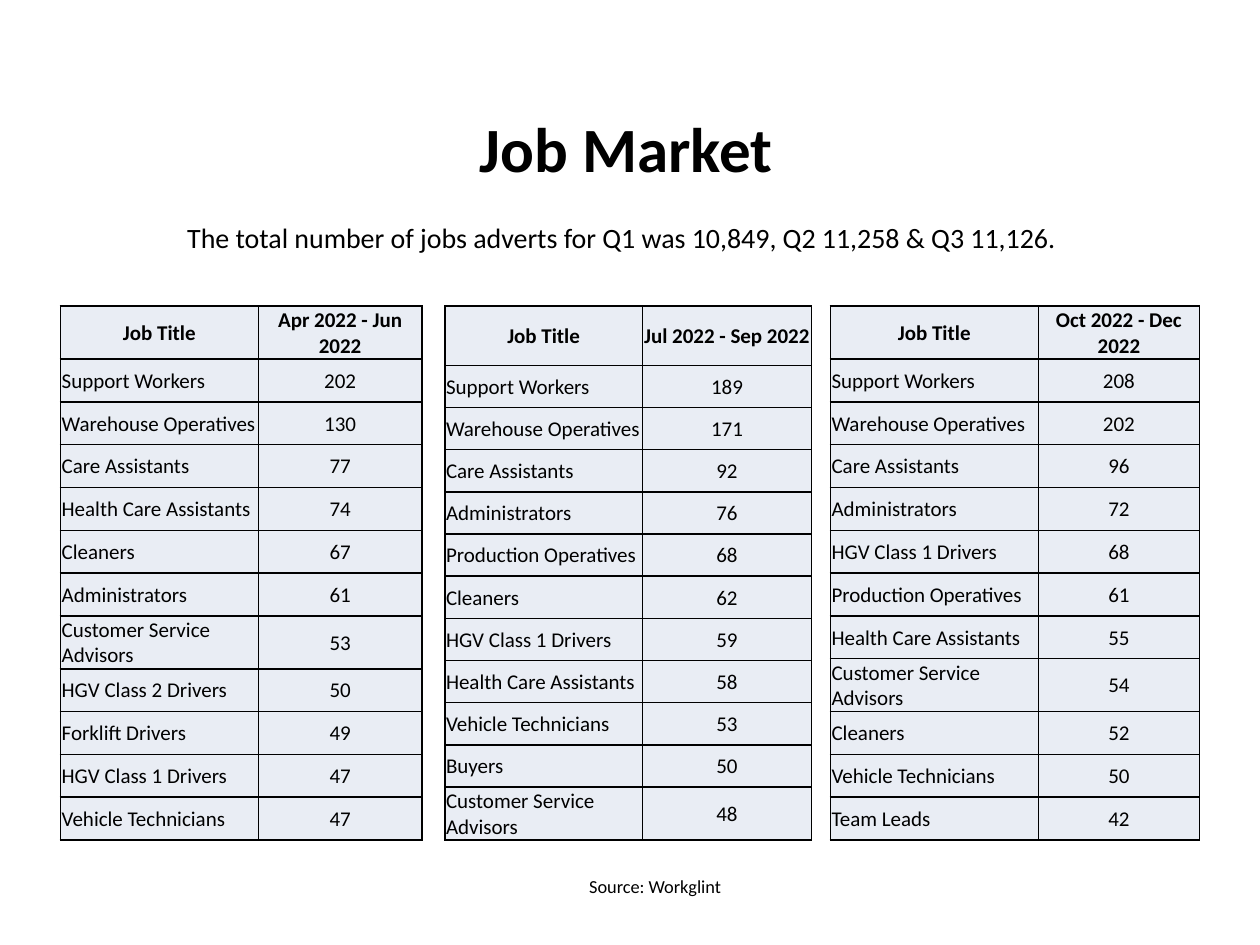
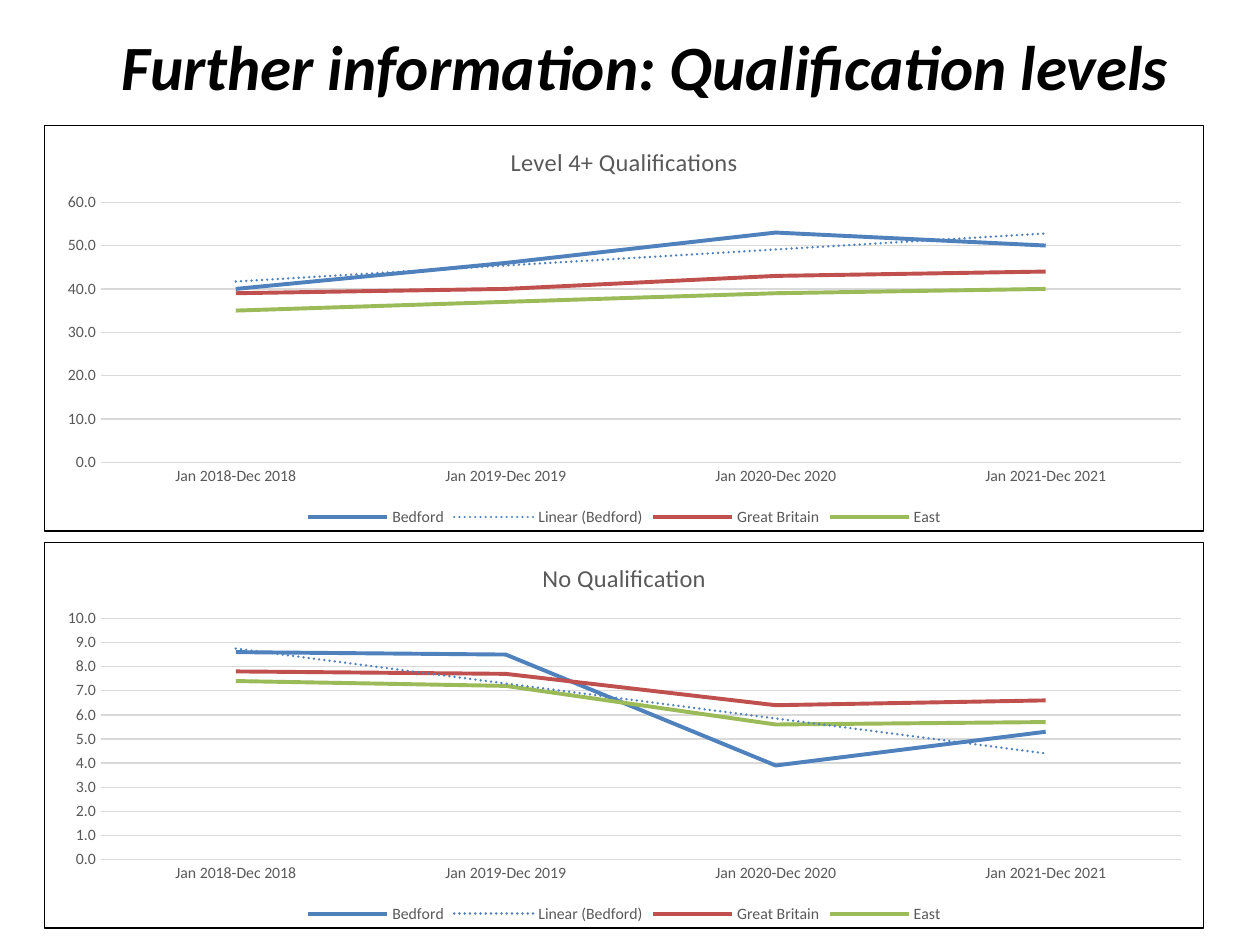
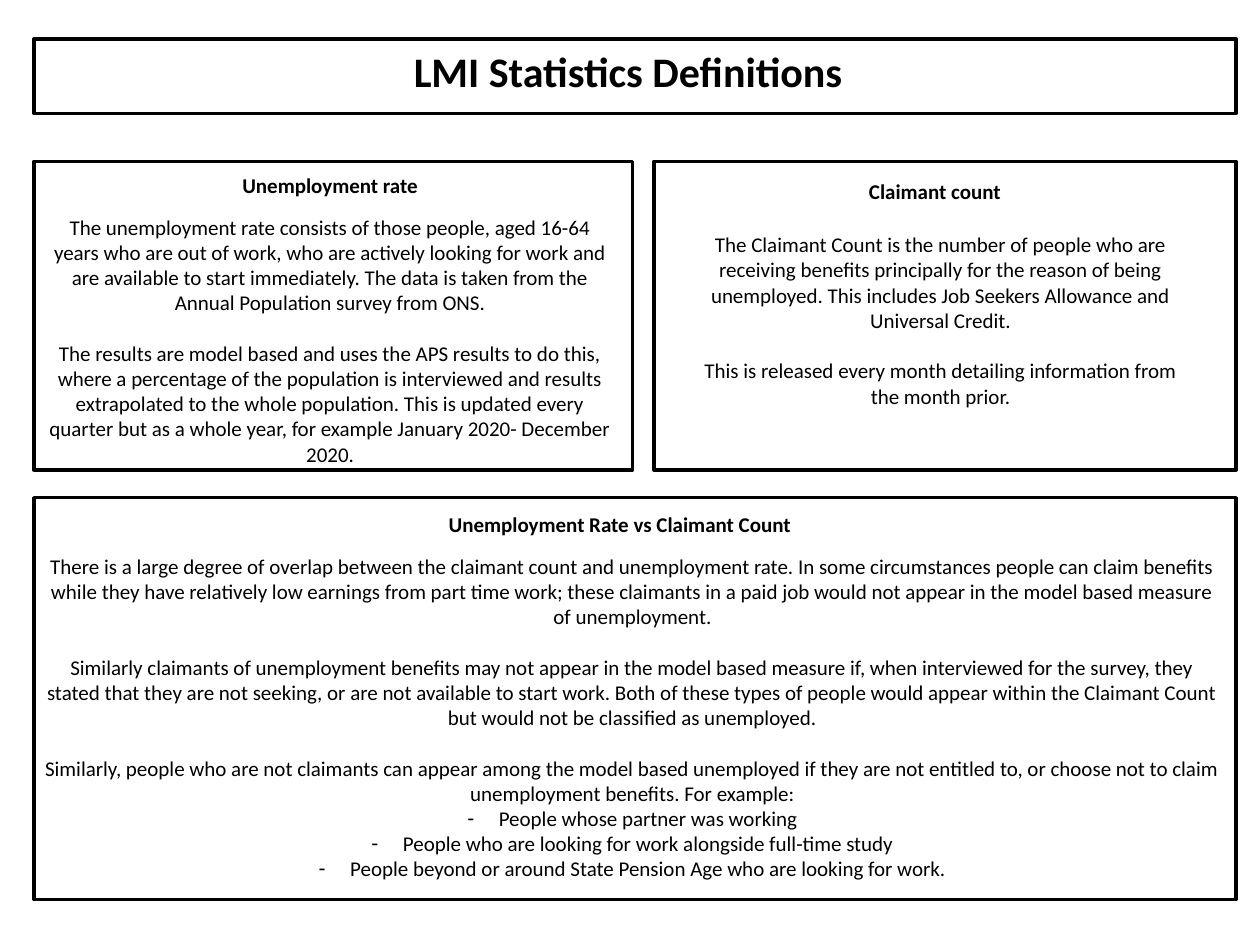
import pptx
import pptx.chart.data
import pptx.dml.color
import pptx.enum.chart
import pptx.enum.shapes
import pptx.enum.text
import pptx.oxml
import pptx.oxml.ns
import pptx.util
from pptx.util import Inches

FONT = "Calibri"
BLACK = pptx.dml.color.RGBColor(0x00, 0x00, 0x00)
CELL = pptx.dml.color.RGBColor(0xE9, 0xED, 0xF4)
CHART_TEXT = pptx.dml.color.RGBColor(0x59, 0x59, 0x59)
GRID = pptx.dml.color.RGBColor(0xD9, 0xD9, 0xD9)
BLUE = pptx.dml.color.RGBColor(0x4F, 0x81, 0xBD)
RED = pptx.dml.color.RGBColor(0xC0, 0x50, 0x4D)
GREEN = pptx.dml.color.RGBColor(0x9B, 0xBB, 0x59)

TITLE_AND_BODY, TITLE_ONLY = 1, 5
CENTER = pptx.enum.text.PP_ALIGN.CENTER
LEFT = pptx.enum.text.PP_ALIGN.LEFT
TOP = pptx.enum.text.MSO_ANCHOR.TOP
MIDDLE = pptx.enum.text.MSO_ANCHOR.MIDDLE
BLANK_LINE = 14.5

TABLE_TOP, TABLE_HEIGHT, WRAPPED_ROW = 2.43, 4.24, 0.42
WRAPPED_JOB = "Customer Service Advisors"
# left, column widths, header height, period, jobs
QUARTERS = [
    (0.48, (1.57, 1.3), 0.42, "Apr 2022 - Jun 2022", [
        ("Support Workers", 202), ("Warehouse Operatives", 130),
        ("Care Assistants", 77), ("Health Care Assistants", 74),
        ("Cleaners", 67), ("Administrators", 61), (WRAPPED_JOB, 53),
        ("HGV Class 2 Drivers", 50), ("Forklift Drivers", 49),
        ("HGV Class 1 Drivers", 47), ("Vehicle Technicians", 47)]),
    (3.53, (1.57, 1.34), 0.47, "Jul 2022 - Sep 2022", [
        ("Support Workers", 189), ("Warehouse Operatives", 171),
        ("Care Assistants", 92), ("Administrators", 76),
        ("Production Operatives", 68), ("Cleaners", 62),
        ("HGV Class 1 Drivers", 59), ("Health Care Assistants", 58),
        ("Vehicle Technicians", 53), ("Buyers", 50), (WRAPPED_JOB, 48)]),
    (6.59, (1.65, 1.28), 0.42, "Oct 2022 - Dec 2022", [
        ("Support Workers", 208), ("Warehouse Operatives", 202),
        ("Care Assistants", 96), ("Administrators", 72),
        ("HGV Class 1 Drivers", 68), ("Production Operatives", 61),
        ("Health Care Assistants", 55), (WRAPPED_JOB, 54),
        ("Cleaners", 52), ("Vehicle Technicians", 50), ("Team Leads", 42)]),
]

YEARS = [f"Jan {year}-Dec {year}" for year in range(2018, 2022)]
AREAS = [("Bedford", BLUE), ("Great Britain", RED), ("East", GREEN)]
LEVEL_4 = [(40, 46, 53, 50), (39, 40, 43, 44), (35, 37, 39, 40)]
NO_QUALIFICATION = [(8.6, 8.5, 3.9, 5.3), (7.8, 7.7, 6.4, 6.6), (7.4, 7.2, 5.6, 5.7)]

UNEMPLOYMENT = [
    "The unemployment rate consists of those people, aged 16-64 years who are out of work, "
    "who are actively looking for work and are available to start immediately. The data is "
    "taken from the Annual Population survey from ONS.",
    "The results are model based and uses the APS results to do this, where a percentage of "
    "the population is interviewed and results extrapolated to the whole population. This is "
    "updated every quarter but as a whole year, for example January 2020- December 2020.",
]
CLAIMANTS = [
    "The Claimant Count is the number of people who are receiving benefits principally for "
    "the reason of being unemployed. This includes Job Seekers Allowance and Universal Credit.",
    "This is released every month detailing information from the month prior.",
]
COMPARISON = [
    "There is a large degree of overlap between the claimant count and unemployment rate. In "
    "some circumstances people can claim benefits while they have relatively low earnings from "
    "part time work; these claimants in a paid job would not appear in the model based measure "
    "of unemployment.",
    "Similarly claimants of unemployment benefits may not appear in the model based measure if, "
    "when interviewed for the survey, they stated that they are not seeking, or are not "
    "available to start work. Both of these types of people would appear within the Claimant "
    "Count but would not be classified as unemployed.",
    "Similarly, people who are not claimants can appear among the model based unemployed if "
    "they are not entitled to, or choose not to claim unemployment benefits. For example:",
]
EXAMPLES = [
    "People whose partner was working",
    "People who are looking for work alongside full-time study",
    "People beyond or around State Pension Age who are looking for work.",
]


def style_font(font, size, color=BLACK, bold=False, italic=False):
    font.name, font.size = FONT, pptx.util.Pt(size)
    font.bold, font.italic = bold, italic
    font.color.rgb = color


def write(paragraph, text, size, align=CENTER, **style):
    paragraph.alignment = align
    run = paragraph.add_run()
    run.text = text
    style_font(run.font, size, **style)


def write_paragraphs(frame, texts, size, gap=BLANK_LINE, **style):
    """Fill an empty frame with centred paragraphs, gap points apart."""
    frame.word_wrap = True
    for index, text in enumerate(texts):
        paragraph = frame.add_paragraph() if index else frame.paragraphs[0]
        paragraph.space_before = pptx.util.Pt(gap if index else 0)
        write(paragraph, text, size, **style)


def place(shape, box):
    shape.left, shape.top, shape.width, shape.height = map(Inches, box)


def add_text(slide, box, texts, size, **style):
    frame = slide.shapes.add_textbox(*map(Inches, box)).text_frame
    write_paragraphs(frame, texts, size, **style)


def set_title(slide, box, text, size, anchor=TOP, italic=False):
    place(slide.shapes.title, box)
    frame = slide.shapes.title.text_frame
    frame.vertical_anchor = anchor
    frame.auto_size = pptx.enum.text.MSO_AUTO_SIZE.NONE
    write_paragraphs(frame, [text], size, bold=True, italic=italic)


def add_frame(slide, box):
    """Draw a black outline without fill."""
    frame = slide.shapes.add_shape(pptx.enum.shapes.MSO_SHAPE.RECTANGLE, *map(Inches, box))
    frame.shadow.inherit = False
    frame.fill.background()
    frame.line.color.rgb = BLACK
    frame.line.width = pptx.util.Pt(2)


def line_xml(tag, color, points, dash="solid", cap="flat"):
    return (f'<a:{tag} {pptx.oxml.ns.nsdecls("a")} w="{pptx.util.Pt(points)}" cap="{cap}">'
            f'<a:solidFill><a:srgbClr val="{color}"/></a:solidFill>'
            f'<a:prstDash val="{dash}"/></a:{tag}>')


def fill_cell(cell, text, align, bold):
    cell.margin_left = cell.margin_right = cell.margin_top = Inches(0.01)
    cell.margin_bottom = 0
    cell.vertical_anchor = MIDDLE
    properties = cell._tc.get_or_add_tcPr()
    for side in ("lnL", "lnR", "lnT", "lnB"):
        properties.append(pptx.oxml.parse_xml(line_xml(side, BLACK, 1)))
    cell.fill.solid()
    cell.fill.fore_color.rgb = CELL
    write(cell.text_frame.paragraphs[0], text, 12, align=align, bold=bold)


def add_job_table(slide, left, widths, header_height, period, jobs):
    rows = [("Job Title", period), *jobs]
    plain_row = (TABLE_HEIGHT - header_height - WRAPPED_ROW) / (len(jobs) - 1)
    box = (left, TABLE_TOP, sum(widths), TABLE_HEIGHT)
    table = slide.shapes.add_table(len(rows), 2, *map(Inches, box)).table
    table.horz_banding = False
    for column, width in zip(table.columns, widths):
        column.width = Inches(width)
    for index, (job, count) in enumerate(rows):
        header = index == 0
        height = header_height if header else WRAPPED_ROW if job == WRAPPED_JOB else plain_row
        table.rows[index].height = Inches(height)
        fill_cell(table.cell(index, 0), job, CENTER if header else LEFT, header)
        fill_cell(table.cell(index, 1), str(count), CENTER, header)


def add_trend(series, color):
    """Add a dotted linear trend line to a chart series."""
    trend = pptx.oxml.parse_xml(
        f'<c:trendline {pptx.oxml.ns.nsdecls("c")}>'
        f'<c:spPr>{line_xml("ln", color, 1.5, "sysDot", "rnd")}</c:spPr>'
        '<c:trendlineType val="linear"/><c:dispRSqr val="0"/><c:dispEq val="0"/></c:trendline>')
    series._element.find(pptx.oxml.ns.qn("c:cat")).addprevious(trend)


def add_border(chart):
    border = pptx.oxml.parse_xml(
        f'<c:spPr {pptx.oxml.ns.nsdecls("c", "a")}>'
        '<a:solidFill><a:srgbClr val="FFFFFF"/></a:solidFill>'
        f'{line_xml("ln", BLACK, 0.75)}</c:spPr>')
    chart._chartSpace.find(pptx.oxml.ns.qn("c:chart")).addnext(border)


def style_axes(chart):
    for axis in (chart.category_axis, chart.value_axis):
        axis.major_tick_mark = axis.minor_tick_mark = pptx.enum.chart.XL_TICK_MARK.NONE
        style_font(axis.tick_labels.font, 9, CHART_TEXT)
    chart.value_axis.format.line.fill.background()
    chart.value_axis.tick_labels.number_format = "#,##0.0"
    chart.value_axis.tick_labels.number_format_is_linked = False
    for rule in (chart.category_axis.format.line, chart.value_axis.major_gridlines.format.line):
        rule.color.rgb = GRID
        rule.width = pptx.util.Pt(0.75)


def add_level_chart(slide, box, title, values):
    data = pptx.chart.data.CategoryChartData(number_format="0.0")
    data.categories = YEARS
    for (area, _), shares in zip(AREAS, values):
        data.add_series(area, shares)
    chart = slide.shapes.add_chart(
        pptx.enum.chart.XL_CHART_TYPE.LINE, *map(Inches, box), data).chart
    style_font(chart.font, 10)
    add_border(chart)
    chart.has_title = True
    write(chart.chart_title.text_frame.paragraphs[0], title, 14, color=CHART_TEXT)
    chart.chart_title.include_in_layout = False
    chart.has_legend = True
    chart.legend.position = pptx.enum.chart.XL_LEGEND_POSITION.BOTTOM
    chart.legend.include_in_layout = False
    style_font(chart.legend.font, 9, CHART_TEXT)
    style_axes(chart)
    plot = chart.plots[0]
    plot.vary_by_categories = False
    for series, (_, color) in zip(plot.series, AREAS):
        series.smooth = False
        series.format.line.color.rgb = color
        series.format.line.width = pptx.util.Pt(2.25)
    add_trend(plot.series[0], BLUE)


def set_bullet(paragraph, mark=None, indent=0.0):
    properties = paragraph._p.get_or_add_pPr()
    properties.set("marL", str(Inches(indent)))
    properties.set("indent", str(-Inches(indent)))
    bullet = f'buChar char="{mark}"' if mark else "buNone"
    properties.append(pptx.oxml.parse_xml(f'<a:{bullet} {pptx.oxml.ns.nsdecls("a")}/>'))


def fill_comparison(body, box):
    place(body, box)
    frame = body.text_frame
    frame.auto_size = pptx.enum.text.MSO_AUTO_SIZE.NONE
    write_paragraphs(frame, COMPARISON, 12)
    for paragraph in frame.paragraphs:
        set_bullet(paragraph)
    for example in EXAMPLES:
        paragraph = frame.add_paragraph()
        paragraph.space_before = pptx.util.Pt(0)
        write(paragraph, example, 12)
        set_bullet(paragraph, "-", 0.25)


def add_inner_text(slide, box, inner, texts, bold=False):
    """Add text in an inner box given relative to the corner of box."""
    x, y, width, height = inner
    add_text(slide, (box[0] + x, box[1] + y, width, height), texts, 12, bold=bold)


def add_definition(slide, box, heading_box, heading):
    add_frame(slide, box)
    add_inner_text(slide, box, heading_box, [heading], bold=True)


def build_job_market(deck):
    slide = deck.slides.add_slide(deck.slide_layouts[TITLE_ONLY])
    set_title(slide, (-0.03, 0.82, 10, 0.74), "Job Market", 36)
    add_text(slide, (-0.05, 1.7, 9.97, 0.37), [
        "The total number of jobs adverts for Q1 was 10,849, Q2 11,258 & Q3 11,126."], 16)
    for quarter in QUARTERS:
        add_job_table(slide, *quarter)
    add_text(slide, (0.2, 6.9, 10, 0.28), ["Source: Workglint"], 10.5)


def build_qualifications(deck):
    slide = deck.slides.add_slide(deck.slide_layouts[TITLE_ONLY])
    set_title(slide, (0.12, -0.11, 10, 1.25), "Further information: Qualification levels",
              36, MIDDLE, italic=True)
    add_level_chart(slide, (0.35, 0.99, 9.21, 3.23), "Level 4+ Qualifications", LEVEL_4)
    add_level_chart(slide, (0.35, 4.3, 9.21, 3.07), "No Qualification", NO_QUALIFICATION)


def build_definitions(deck):
    slide = deck.slides.add_slide(deck.slide_layouts[TITLE_AND_BODY])
    add_frame(slide, (0.27, 0.31, 9.54, 0.59))
    set_title(slide, (0.32, 0.31, 9.33, 0.5), "LMI Statistics Definitions", 24)
    unemployment_box = (0.27, 1.28, 4.75, 2.45)
    add_definition(slide, unemployment_box, (1.21, 0.04, 2.28, 0.3), "Unemployment rate")
    add_inner_text(slide, unemployment_box, (0, 0.37, 4.7, 2.12), UNEMPLOYMENT)
    claimant_box = (5.19, 1.28, 4.62, 2.45)
    add_definition(slide, claimant_box, (1.09, 0.09, 2.28, 0.3), "Claimant count")
    add_inner_text(slide, claimant_box, (0.22, 0.51, 4.11, 1.51), CLAIMANTS)
    add_definition(slide, (0.27, 3.95, 9.54, 3.19), (0.07, 0.06, 9.16, 0.3),
                   "Unemployment Rate vs Claimant Count")
    fill_comparison(slide.placeholders[1], (0.25, 4.34, 9.54, 2.73))


def main():
    deck = pptx.Presentation()
    deck.slide_width, deck.slide_height = Inches(10), Inches(7.5)
    build_job_market(deck)
    build_qualifications(deck)
    build_definitions(deck)
    deck.save("out.pptx")


if __name__ == "__main__":
    main()
